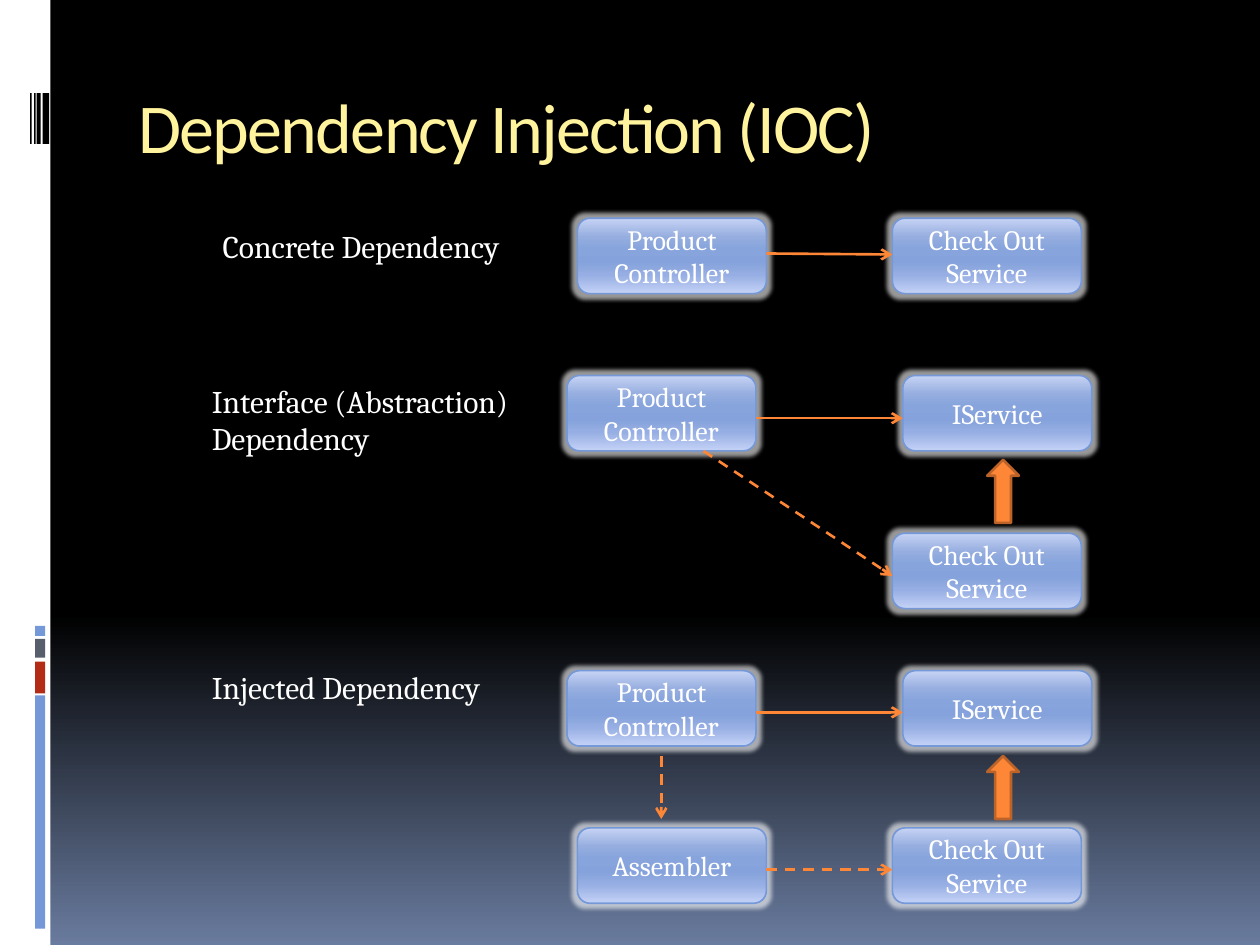
import pptx
import pptx.dml.color
import pptx.enum.dml
import pptx.enum.shapes
import pptx.enum.text
import pptx.oxml
import pptx.oxml.ns
import pptx.util
from lxml import etree

Cm, Pt = pptx.util.Cm, pptx.util.Pt
SHAPES = pptx.enum.shapes.MSO_SHAPE
ALIGN = pptx.enum.text.PP_ALIGN
ANCHOR = pptx.enum.text.MSO_ANCHOR

THEME = {
    "white": "FFFFFF", "black": "000000", "title": "FFF39D",
    "blue": "7598D9", "red": "B32C16", "slate": "575F6D",
    "orange": "FE8637", "dark_orange": "BC6329",
    "background": [(0, "000000"), (65, "000000"), (100, "697B9E")],
    "gloss": [(0, "C6D3F4"), (25, "95ADDF"), (40, "87A4DC"), (50, "85A2DC"),
              (60, "87A4DC"), (75, "96AEE3"), (100, "C4D2F6")],
    "heading_font": "Calibri", "body_font": "Cambria",
    "title_size": 40, "label_size": 18, "box_size": 16,
}

# All lengths are centimetres.
TITLE = "Dependency Injection (IOC)"
SIDEBAR_WIDTH = 1.02
STRIPES = [(14.02, 4.7, "blue"), (13.34, 0.64, "red"),
           (12.88, 0.38, "slate"), (12.62, 0.2, "blue")]  # top, height, colour
BARCODE = [(0.86, 0.13), (0.74, 0.08), (0.69, 0.03), (0.61, 0.03)]  # left, width

LABELS = [("Concrete Dependency", 4.24, 4.45, 6.48, 1.02),
          ("Interface (Abstraction) Dependency", 4.02, 7.57, 7.11, 2.03),
          ("Injected Dependency", 4.02, 13.34, 7.11, 1.02)]

BOX_WIDTH, BOX_HEIGHT = 3.81, 1.52
CONTROLLER, CHECK_OUT = "Product\nController", "Check Out\nService"
INNER_LEFT, INNER_RIGHT = 11.64, 17.99
OUTER_LEFT, OUTER_RIGHT = 11.43, 18.2
BOXES = [(CONTROLLER, INNER_LEFT, 4.4), (CHECK_OUT, INNER_RIGHT, 4.4),
         (CONTROLLER, OUTER_LEFT, 7.57), ("IService", OUTER_RIGHT, 7.57),
         (CHECK_OUT, INNER_RIGHT, 10.75),
         (CONTROLLER, OUTER_LEFT, 13.52), ("IService", OUTER_RIGHT, 13.52),
         ("Assembler", INNER_LEFT, 16.69), (CHECK_OUT, INNER_RIGHT, 16.69)]

INNER_END, OUTER_END = INNER_LEFT + BOX_WIDTH, OUTER_LEFT + BOX_WIDTH
LINKS = [(INNER_END, 5.11, INNER_RIGHT, 5.13, False),
         (OUTER_END, 8.43, OUTER_RIGHT, 8.43, False),
         (14.18, 9.09, INNER_RIGHT, 11.61, True),
         (OUTER_END, 14.36, OUTER_RIGHT, 14.36, False),
         (13.33, 15.24, 13.33, 16.51, True),
         (INNER_END, 17.53, INNER_RIGHT, 17.53, True)]  # from, to, dashed
IMPLEMENTS_TOPS = [9.27, 15.24]


def rgb(name):
    return pptx.dml.color.RGBColor.from_string(THEME[name])


def add_child(parent, tag, **attributes):
    return etree.SubElement(parent, pptx.oxml.ns.qn(tag), attributes)


def fill_gradient(fill, owner, stops):
    """Fill downwards with any number of (percent, colour) stops."""
    fill.gradient()
    fill.gradient_angle = 270
    stop_list = owner.xpath(".//a:gradFill/a:gsLst")[0]
    for stop in list(stop_list):
        stop_list.remove(stop)
    for percent, colour in stops:
        stop = add_child(stop_list, "a:gs", pos=str(percent * 1000))
        add_child(stop, "a:srgbClr", val=colour)


def style_text(frame, font, size, colour, align):
    frame.word_wrap = True
    for paragraph in frame.paragraphs:
        paragraph.alignment = align
        for run in paragraph.runs:
            run.font.name = THEME[font]
            run.font.size = Pt(THEME[size])
            run.font.color.rgb = rgb(colour)


def add_plain(slide, kind, left, top, width, height, fill):
    shape = slide.shapes.add_shape(kind, Cm(left), Cm(top), Cm(width), Cm(height))
    shape.shadow.inherit = False
    shape.fill.solid()
    shape.fill.fore_color.rgb = rgb(fill)
    shape.line.fill.background()
    return shape


def add_sidebar(slide):
    add_plain(slide, SHAPES.RECTANGLE, 0, 0, SIDEBAR_WIDTH, 19.05, "white")
    for top, height, colour in STRIPES:
        add_plain(slide, SHAPES.RECTANGLE, 0.71, top, 0.2, height, colour)
    for left, width in BARCODE:
        add_plain(slide, SHAPES.RECTANGLE, left, 1.88, width, 1.02, "black")


def add_title(slide):
    title = slide.shapes.title
    title.left, title.top, title.width, title.height = Cm(2.54), Cm(1.48), Cm(21.59), Cm(2.54)
    frame = title.text_frame
    frame.text = TITLE
    frame.vertical_anchor = ANCHOR.TOP
    frame.margin_top = Cm(0.2)
    style_text(frame, "heading_font", "title_size", "title", ALIGN.LEFT)
    frame.paragraphs[0].runs[0].font._element.set("spc", "-100")


def add_label(slide, text, left, top, width, height):
    label = slide.shapes.add_textbox(Cm(left), Cm(top), Cm(width), Cm(height))
    label.text_frame.text = text
    style_text(label.text_frame, "body_font", "label_size", "white", ALIGN.LEFT)


def add_box(slide, text, left, top):
    """Add a glossy rounded box with a soft white glow."""
    box = add_plain(slide, SHAPES.ROUNDED_RECTANGLE, left, top, BOX_WIDTH, BOX_HEIGHT, "blue")
    fill_gradient(box.fill, box._element, THEME["gloss"])
    box.line.color.rgb = rgb("blue")
    box.line.width = Pt(0.94)
    effects = box._element.spPr.find(pptx.oxml.ns.qn("a:effectLst"))
    glow = add_child(effects, "a:glow", rad=str(Pt(5)))
    add_child(add_child(glow, "a:srgbClr", val=THEME["white"]), "a:alpha", val="60000")
    box.text_frame.text = text
    box.text_frame.vertical_anchor = ANCHOR.MIDDLE
    style_text(box.text_frame, "body_font", "box_size", "white", ALIGN.CENTER)


def add_link(slide, x1, y1, x2, y2, dashed):
    link = slide.shapes.add_connector(
        pptx.enum.shapes.MSO_CONNECTOR.STRAIGHT, Cm(x1), Cm(y1), Cm(x2), Cm(y2))
    link.line.color.rgb = rgb("orange")
    link.line.width = Pt(1.5)
    if dashed:
        link.line.dash_style = pptx.enum.dml.MSO_LINE.DASH
    add_child(link.line._get_or_add_ln(), "a:tailEnd", type="arrow")
    add_child(link._element.spPr, "a:effectLst")


def add_implements_arrow(slide, top):
    arrow = add_plain(slide, SHAPES.DOWN_ARROW, 19.9, top, 0.64, 1.27, "orange")
    arrow.rotation = 180
    arrow.line.color.rgb = rgb("dark_orange")
    arrow.line.width = Pt(1.5)


def main():
    deck = pptx.Presentation()
    deck.slide_width, deck.slide_height = Cm(25.4), Cm(19.05)
    slide = deck.slides.add_slide(deck.slide_layouts[5])
    fill_gradient(slide.background.fill, slide._element, THEME["background"])
    add_sidebar(slide)
    add_title(slide)
    for label in LABELS:
        add_label(slide, *label)
    for box in BOXES:
        add_box(slide, *box)
    for link in LINKS:
        add_link(slide, *link)
    for top in IMPLEMENTS_TOPS:
        add_implements_arrow(slide, top)
    deck.save("out.pptx")


if __name__ == "__main__":
    main()
